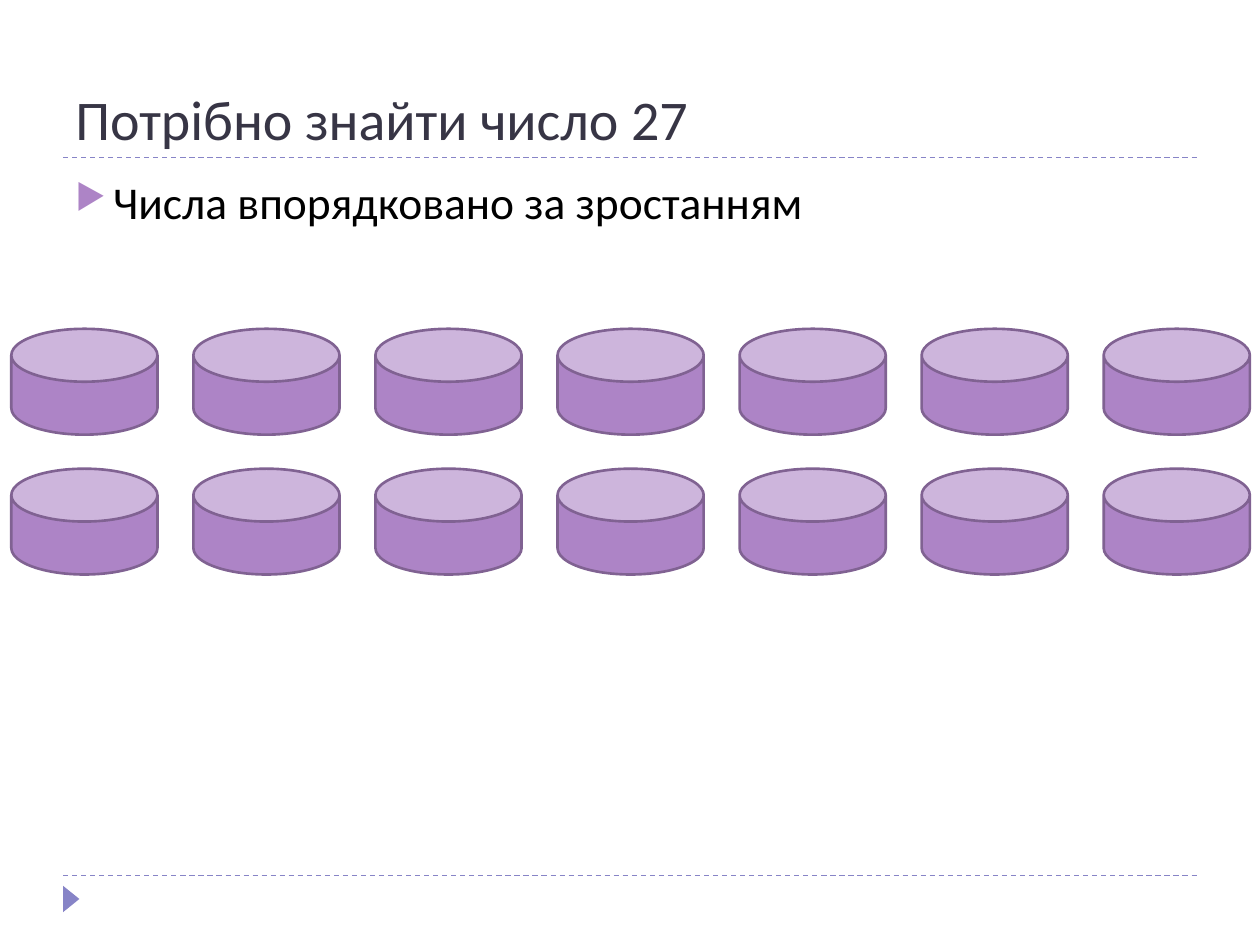
from dataclasses import dataclass

import lxml.etree
import pptx
import pptx.dml.color
import pptx.enum.dml
import pptx.enum.shapes
import pptx.enum.text
import pptx.oxml.ns
import pptx.util

Inches = pptx.util.Inches
Pt = pptx.util.Pt
SHAPE = pptx.enum.shapes.MSO_SHAPE
ANCHOR = pptx.enum.text.MSO_ANCHOR
qn = pptx.oxml.ns.qn


@dataclass(frozen=True)
class Theme:
    font: str = "Calibri"
    title_size: int = 32
    body_size: int = 26
    title: str = "373545"
    body: str = "000000"
    accent: str = "8784C7"
    can: str = "AD84C6"
    can_edge: str = "806292"


@dataclass(frozen=True)
class Box:
    left: float
    top: float
    width: float
    height: float

    def lengths(self) -> list:
        return [Inches(v) for v in (self.left, self.top, self.width, self.height)]


@dataclass(frozen=True)
class Grid:
    first: Box
    cols: int
    rows: int
    dx: float
    dy: float


THEME = Theme()
RULES = (6.95, 1.25)
CANS = Grid(Box(0.09, 2.61, 1.16, 0.84), cols=7, rows=2, dx=1.445, dy=1.11)


def rgb(code: str) -> pptx.dml.color.RGBColor:
    return pptx.dml.color.RGBColor.from_string(code)


def add_rule(s, y: float) -> None:
    line = s.shapes.add_connector(pptx.enum.shapes.MSO_CONNECTOR.STRAIGHT,
                                  Inches(0.5), Inches(y), Inches(9.5), Inches(y))
    line.line.color.rgb = rgb(THEME.accent)
    line.line.width = Pt(0.75)
    line.line.dash_style = pptx.enum.dml.MSO_LINE.DASH
    lxml.etree.SubElement(line._element.spPr, qn("a:effectLst"))


def add_solid(s, kind, box: Box, fill: str, edge: str = ""):
    sp = s.shapes.add_shape(kind, *box.lengths())
    sp.shadow.inherit = False
    sp.adjustments[0] = 0.5
    sp.fill.solid()
    sp.fill.fore_color.rgb = rgb(fill)
    if edge:
        sp.line.color.rgb = rgb(edge)
        sp.line.width = Pt(1.5)
    else:
        sp.line.fill.background()
    return sp


def add_text(s, box: Box, text: str, size: int, color: str, anchor):
    tf = s.shapes.add_textbox(*box.lengths()).text_frame
    tf.word_wrap = True
    tf.vertical_anchor = anchor
    p = tf.paragraphs[0]
    p.text = text
    p.font.name = THEME.font
    p.font.size = Pt(size)
    p.font.color.rgb = rgb(color)
    return p


def add_bullet(p, char: str, color: str, percent: int, indent: float) -> None:
    pPr = p._p.get_or_add_pPr()
    pPr.set("marL", str(Inches(indent)))
    pPr.set("indent", str(-Inches(indent)))
    p.space_before = Pt(6)
    bu_color = lxml.etree.Element(qn("a:buClr"))
    lxml.etree.SubElement(bu_color, qn("a:srgbClr"), val=color)
    bu_size = lxml.etree.Element(qn("a:buSzPct"), val=str(percent * 1000))
    bu_char = lxml.etree.Element(qn("a:buChar"), char=char)
    # Bullet elements belong just before the default run properties
    for element in (bu_color, bu_size, bu_char):
        pPr.find(qn("a:defRPr")).addprevious(element)


def add_cans(s, grid: Grid) -> None:
    b = grid.first
    for row in range(grid.rows):
        for col in range(grid.cols):
            box = Box(b.left + col * grid.dx, b.top + row * grid.dy, b.width, b.height)
            add_solid(s, SHAPE.CAN, box, THEME.can, THEME.can_edge)


def main() -> None:
    prs = pptx.Presentation()
    prs.slide_width, prs.slide_height = Inches(10), Inches(7.5)
    s = prs.slides.add_slide(prs.slide_layouts[6])

    # Dashed rules and corner marker
    for y in RULES:
        add_rule(s, y)
    marker = add_solid(s, SHAPE.ISOSCELES_TRIANGLE, Box(0.46, 7.07, 0.21, 0.13), THEME.accent)
    marker.rotation = 90

    # Title and statement
    add_text(s, Box(0.5, 0.17, 9, 1.08), "Потрібно знайти число 27",
             THEME.title_size, THEME.title, ANCHOR.BOTTOM)
    p = add_text(s, Box(0.5, 1.33, 9, 1.01), "Числа впорядковано за зростанням",
                 THEME.body_size, THEME.body, ANCHOR.TOP)
    add_bullet(p, "▶", THEME.can, percent=76, indent=0.3)

    # Two rows of cans
    add_cans(s, CANS)

    prs.save("out.pptx")


if __name__ == "__main__":
    main()
